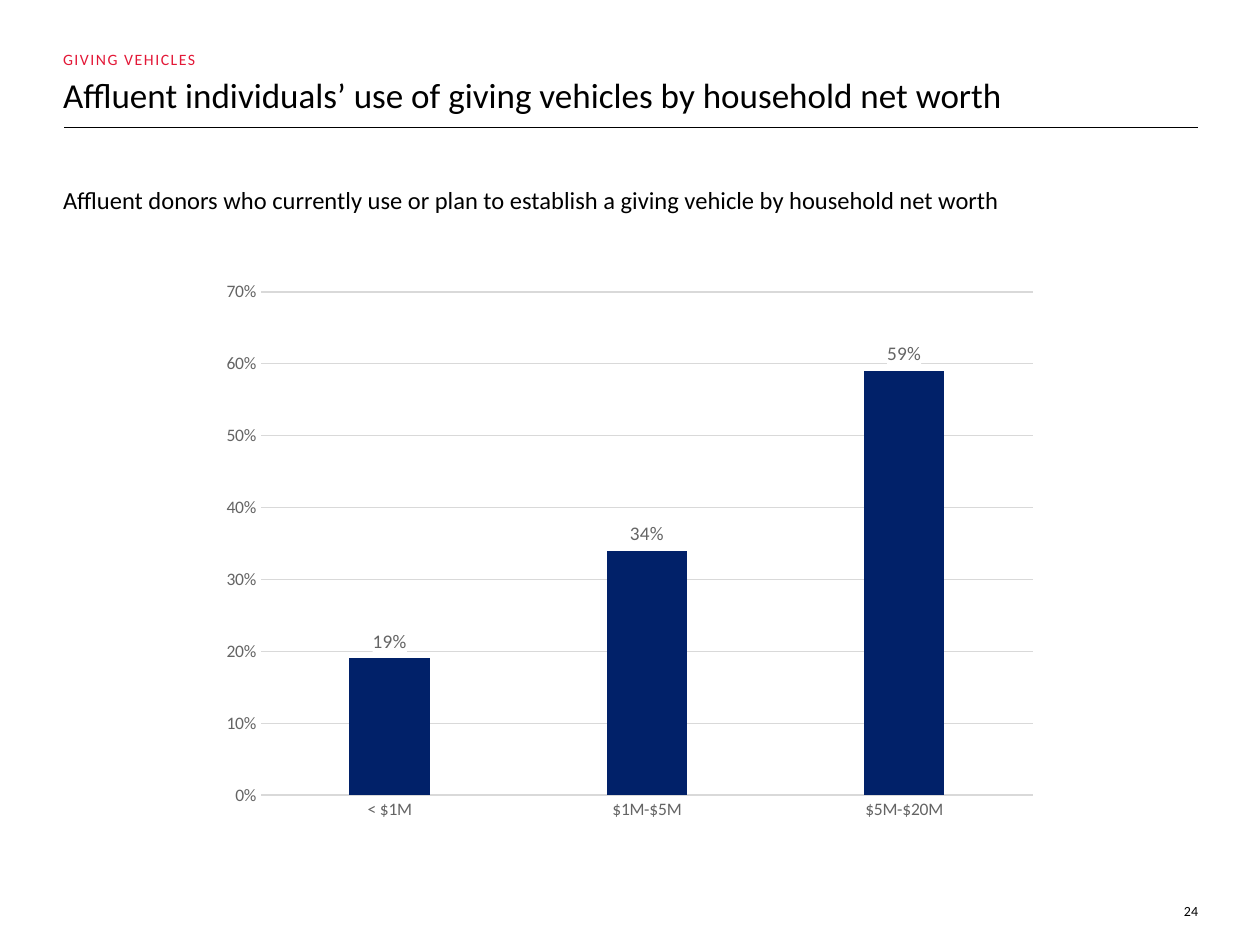
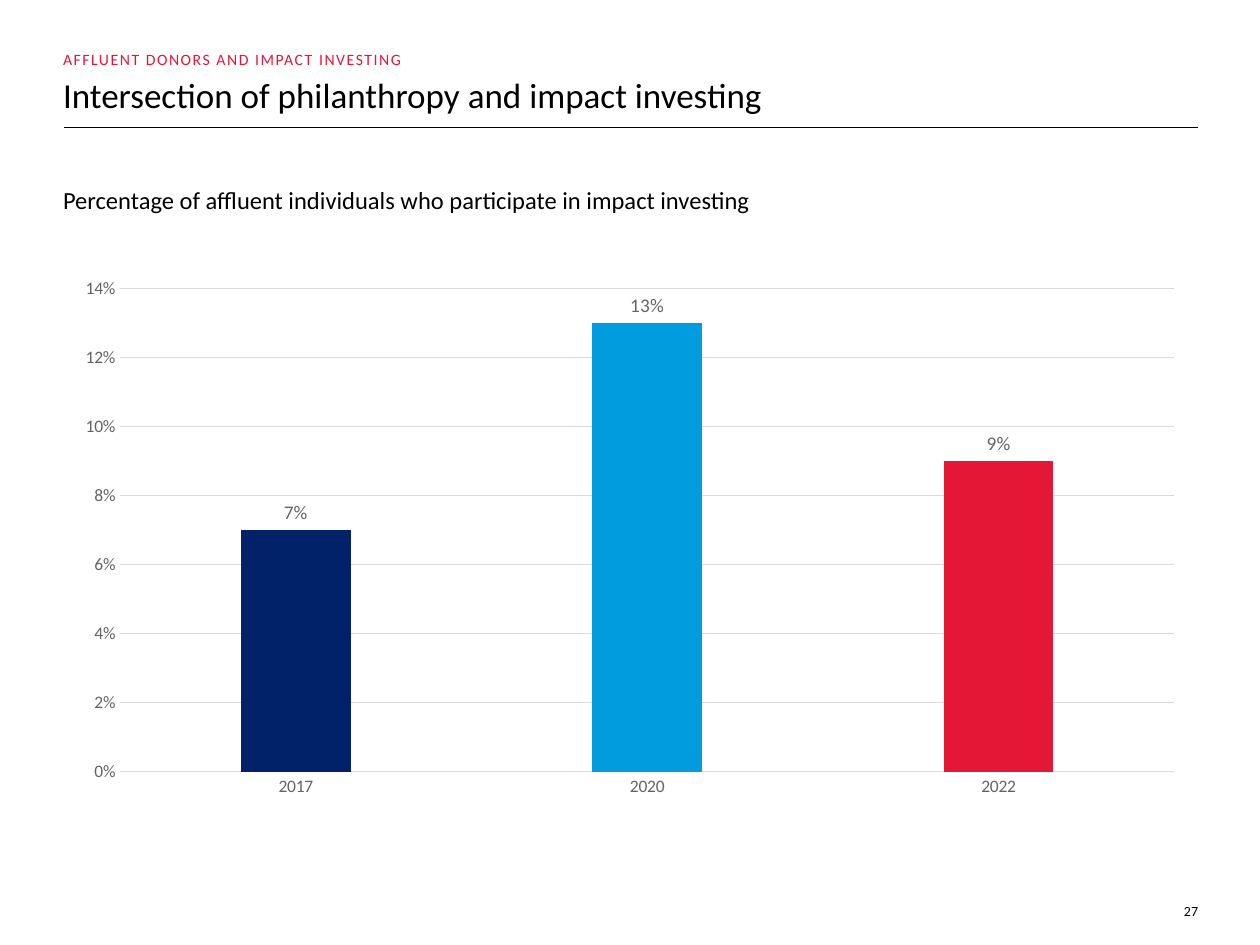
from lxml import etree
from pptx import Presentation
from pptx.chart.data import CategoryChartData
from pptx.dml.color import RGBColor
from pptx.enum.chart import XL_CHART_TYPE, XL_LABEL_POSITION, XL_TICK_MARK
from pptx.enum.shapes import MSO_CONNECTOR
from pptx.enum.text import MSO_ANCHOR, MSO_AUTO_SIZE, PP_ALIGN
from pptx.oxml import parse_xml
from pptx.oxml.ns import nsdecls, qn
from pptx.util import Inches, Pt

COLUMN = XL_CHART_TYPE.COLUMN_CLUSTERED
OUT_END = XL_LABEL_POSITION.OUTSIDE_END
NO_TICK = XL_TICK_MARK.NONE
STRAIGHT = MSO_CONNECTOR.STRAIGHT
TOP, MID, LOW = MSO_ANCHOR.TOP, MSO_ANCHOR.MIDDLE, MSO_ANCHOR.BOTTOM
LEFT, RIGHT = PP_ALIGN.LEFT, PP_ALIGN.RIGHT
NO_FIT = MSO_AUTO_SIZE.NONE

# Shared style; the grid has 20 columns and 15 rows of half an inch
FONT = "Calibri"
CELL = 0.5
BLACK, GREY, RULE, WHITE = "000000", "646464", "D9D9D9", "FFFFFF"
NAVY, SKY, RED, CORAL = "012169", "009CDE", "E41836", "E31837"


def color(code):
    return RGBColor.from_string(code)


def grid(*cells):
    return [Inches(n * CELL) for n in cells]


class Deck:
    def __init__(self):
        self.prs = Presentation()
        self.prs.slide_width, self.prs.slide_height = grid(20, 15)
        self.slide = None

    def font(self, font, size, code):
        font.name, font.size = FONT, Pt(size)
        font.color.rgb = color(code)

    def fill(self, shape, text, at, size, code=BLACK, anchor=TOP, align=LEFT):
        """Place a shape and set its single paragraph."""
        shape.left, shape.top, shape.width, shape.height = grid(*at)
        frame = shape.text_frame
        frame.text = text
        frame.word_wrap, frame.auto_size = True, NO_FIT
        frame.vertical_anchor = anchor
        frame.margin_left = frame.margin_right = 0
        frame.margin_top = frame.margin_bottom = 0
        para = frame.paragraphs[0]
        para.alignment, para.space_before = align, Pt(0)
        run = para.runs[0]
        self.font(run.font, size, code)
        return para, run

    def box(self, text, at, size, **style):
        shape = self.slide.shapes.add_textbox(*grid(*at))
        return self.fill(shape, text, at, size, **style)

    def line(self, x1, y1, x2, y2):
        rule = self.slide.shapes.add_connector(STRAIGHT, *grid(x1, y1, x2, y2))
        rule.line.color.rgb, rule.line.width = color(BLACK), Pt(0.5)
        etree.SubElement(rule._element.spPr, qn("a:effectLst"))

    def page(self, kicker, title, lead, number, wide):
        """Start a slide with its heading, rule, lead line and page number."""
        self.slide = self.prs.slides.add_slide(self.prs.slide_layouts[1])
        self.line(1.02, 2.03, 19.02, 2.03)
        head, body = self.slide.placeholders
        self.fill(head, title, (1, 1.16, wide, 0.68), 20, anchor=LOW)
        run = self.box(kicker, (1, 0.79, 13.5, 0.46), 9, code=CORAL)[1]
        run.font._element.set("spc", "88")
        para = self.fill(body, lead, (1, 2.94, 18, 0.68), 14)[0]
        props = para._p.get_or_add_pPr()
        props.set("marL", "0")
        props.set("indent", "0")
        etree.SubElement(props, qn("a:buNone"))
        self.box(number, (18.32, 14.33, 0.7, 0.26), 8, anchor=MID, align=RIGHT)

    def axis(self, axis):
        axis.major_tick_mark = axis.minor_tick_mark = NO_TICK
        self.font(axis.tick_labels.font, 10, GREY)

    def chart(self, at, names, vals, top, step, gap, hues):
        data = CategoryChartData(number_format="0%")
        data.categories = names
        data.add_series("Series 1", vals)
        chart = self.slide.shapes.add_chart(COLUMN, *grid(*at), data).chart
        chart.has_legend = chart.has_title = False
        self.font(chart.font, 10, BLACK)

        # Axes
        cat, val = chart.category_axis, chart.value_axis
        self.axis(cat)
        self.axis(val)
        val.minimum_scale, val.maximum_scale, val.major_unit = 0, top, step
        val.tick_labels.number_format = "0%"
        val.tick_labels.number_format_is_linked = False
        val.format.line.fill.background()
        for line in (cat.format.line, val.major_gridlines.format.line):
            line.color.rgb, line.width = color(RULE), Pt(0.75)

        # Bars
        plot = chart.plots[0]
        plot.gap_width, plot.overlap, plot.vary_by_categories = gap, -27, False
        bars = plot.series[0]
        bars.format.fill.solid()
        bars.format.fill.fore_color.rgb = color(hues[0])
        for i, hue in enumerate(hues[1:], 1):
            paint = bars.points[i].format.fill
            paint.solid()
            paint.fore_color.rgb = color(hue)

        # Value labels on a white ground
        tags = bars.data_labels
        tags.show_value, tags.position = True, OUT_END
        tags.number_format, tags.number_format_is_linked = "0%", False
        self.font(tags.font, 11, GREY)
        tags._element.find(qn("c:txPr")).addprevious(parse_xml(
            f'<c:spPr {nsdecls("c", "a")}><a:solidFill>'
            f'<a:srgbClr val="{WHITE}"/></a:solidFill></c:spPr>'))


def main():
    deck = Deck()

    # Giving vehicles by net worth
    deck.page("GIVING VEHICLES",
              "Affluent individuals’ use of giving vehicles by household net worth",
              "Affluent donors who currently use or plan to establish "
              "a giving vehicle by household net worth", "24", 15.32)
    deck.chart((3.33, 4.3, 13.33, 8.89), ["< $1M", "$1M-$5M", "$5M-$20M"],
               [0.19, 0.34, 0.59], 0.7, 0.1, 219, [NAVY])

    # Impact investing by year
    deck.page("AFFLUENT DONORS AND IMPACT INVESTING",
              "Intersection of philanthropy and impact investing",
              "Percentage of affluent individuals who participate "
              "in impact investing", "27", 14)
    deck.chart((1, 4.25, 18, 8.56), ["2017", "2020", "2022"],
               [0.07, 0.13, 0.09], 0.14, 0.02, 220, [NAVY, SKY, RED])

    deck.prs.save("out.pptx")


if __name__ == "__main__":
    main()
